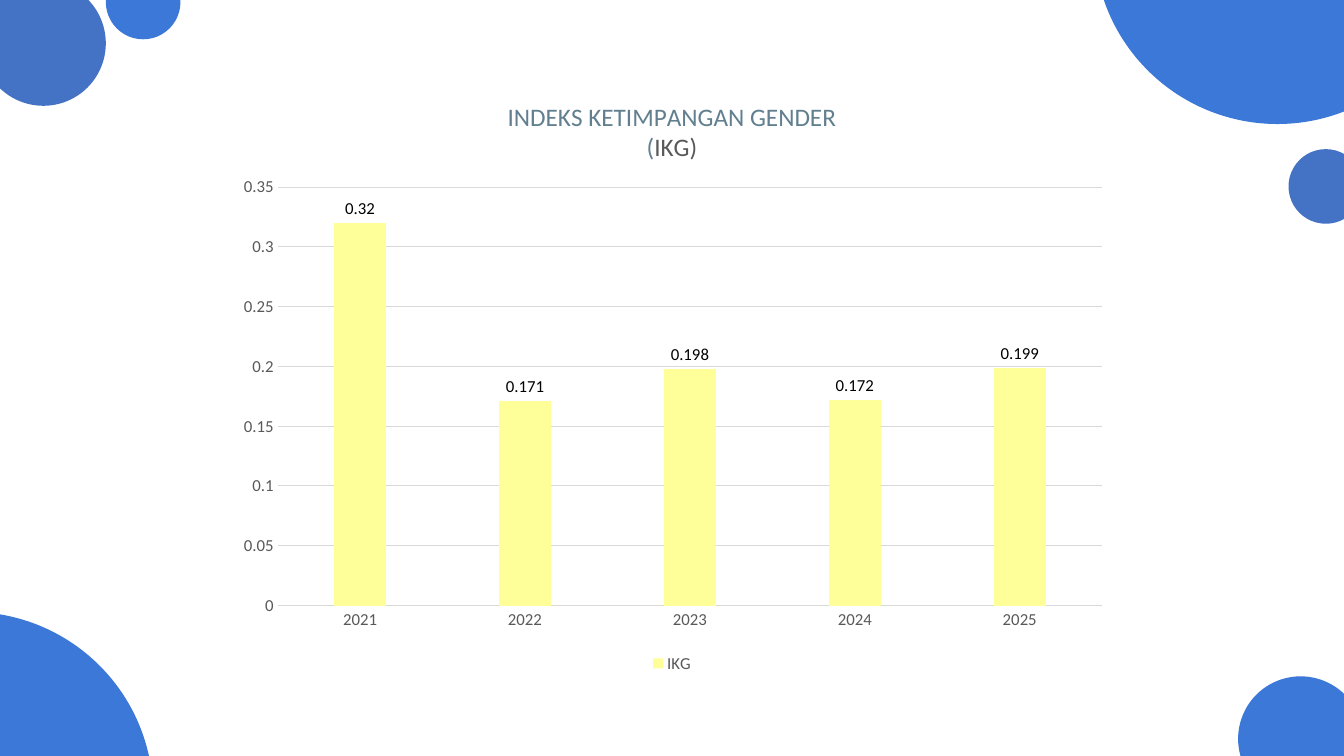
from lxml import etree
from pptx import Presentation
from pptx.chart.data import CategoryChartData
from pptx.dml.color import RGBColor
from pptx.enum.chart import (XL_CHART_TYPE, XL_LABEL_POSITION,
                             XL_LEGEND_POSITION, XL_TICK_MARK)
from pptx.enum.shapes import MSO_SHAPE
from pptx.oxml.ns import qn
from pptx.util import Inches, Pt

FONT = "Calibri"
BLUE, INDIGO = "3C78D8", "4472C4"
YELLOW, GRID, GREY, SLATE, BLACK = "FFFF99", "D9D9D9", "595959", "617F8F", "000000"

# left, top, diameter, colour
CIRCLES = [
    (-2.12, 6.07, 3.64, BLUE),
    (12.28, 6.71, 1.24, BLUE),
    (10.85, -2.41, 3.64, BLUE),
    (12.78, 1.48, 0.74, INDIGO),
    (1.05, -0.35, 0.74, BLUE),
    (-0.19, -0.19, 1.24, INDIGO),
]
TITLE = [
    [("INDEKS KETIMPANGAN GENDER", SLATE)],
    [("(", SLATE), ("IKG)", GREY)],
]
YEARS = ["2021", "2022", "2023", "2024", "2025"]
IKG = [0.32, 0.171, 0.198, 0.172, 0.199]
CHART_BOX = (2.22, 0.79, 8.89, 5.93)
PLOT_AREA = {"x": 0.06, "y": 0.18, "w": 0.92, "h": 0.7}


def rgb(color):
    return RGBColor.from_string(color)


def set_font(font, size, color):
    font.name = FONT
    font.size = Pt(size)
    font.bold = False
    font.color.rgb = rgb(color)


def set_line(line, color):
    line.color.rgb = rgb(color)
    line.width = Pt(0.75)


def add_circle(slide, left, top, diameter, color):
    sp = slide.shapes.add_shape(MSO_SHAPE.OVAL, Inches(left), Inches(top),
                                Inches(diameter), Inches(diameter))
    sp.shadow.inherit = False
    sp.fill.solid()
    sp.fill.fore_color.rgb = rgb(color)
    sp.line.fill.background()


def add_title(chart):
    chart.has_title = True
    chart.chart_title.include_in_layout = False
    tf = chart.chart_title.text_frame
    for i, runs in enumerate(TITLE):
        p = tf.add_paragraph() if i else tf.paragraphs[0]
        set_font(p.font, 18, SLATE)
        for text, color in runs:
            r = p.add_run()
            r.text = text
            set_font(r.font, 18, color)


def place_plot(chart):
    """Fix the inner plot area as fractions of the chart."""
    plot_area = chart.plots[0]._element.getparent()
    layout = plot_area.find(qn("c:layout"))
    if layout is None:
        layout = etree.Element(qn("c:layout"))
        plot_area.insert(0, layout)
    manual = etree.SubElement(layout, qn("c:manualLayout"))
    settings = {"layoutTarget": "inner", "xMode": "edge", "yMode": "edge", **PLOT_AREA}
    for tag, value in settings.items():
        etree.SubElement(manual, qn("c:" + tag)).set("val", str(value))


def add_ikg_chart(slide):
    data = CategoryChartData()
    data.categories = YEARS
    data.add_series("IKG", IKG)
    chart = slide.shapes.add_chart(XL_CHART_TYPE.COLUMN_CLUSTERED,
                                   *map(Inches, CHART_BOX), data).chart
    set_font(chart.font, 10, BLACK)
    add_title(chart)
    place_plot(chart)

    chart.has_legend = True
    chart.legend.position = XL_LEGEND_POSITION.BOTTOM
    chart.legend.include_in_layout = False
    set_font(chart.legend.font, 12, GREY)

    for axis in (chart.category_axis, chart.value_axis):
        axis.major_tick_mark = axis.minor_tick_mark = XL_TICK_MARK.NONE
        set_font(axis.tick_labels.font, 12, GREY)
    set_line(chart.category_axis.format.line, GRID)
    values = chart.value_axis
    values.minimum_scale, values.maximum_scale, values.major_unit = 0, 0.35, 0.05
    values.format.line.fill.background()
    set_line(values.major_gridlines.format.line, GRID)

    plot = chart.plots[0]
    plot.gap_width, plot.overlap, plot.vary_by_categories = 219, -27, False
    series = plot.series[0]
    series.format.fill.solid()
    series.format.fill.fore_color.rgb = rgb(YELLOW)
    labels = series.data_labels
    labels.show_value = True
    labels.position = XL_LABEL_POSITION.OUTSIDE_END
    set_font(labels.font, 12, BLACK)


def main():
    prs = Presentation()
    prs.slide_width, prs.slide_height = Inches(13.33), Inches(7.5)
    slide = prs.slides.add_slide(prs.slide_layouts[6])
    for circle in CIRCLES:
        add_circle(slide, *circle)
    add_ikg_chart(slide)
    prs.save("out.pptx")


if __name__ == "__main__":
    main()
